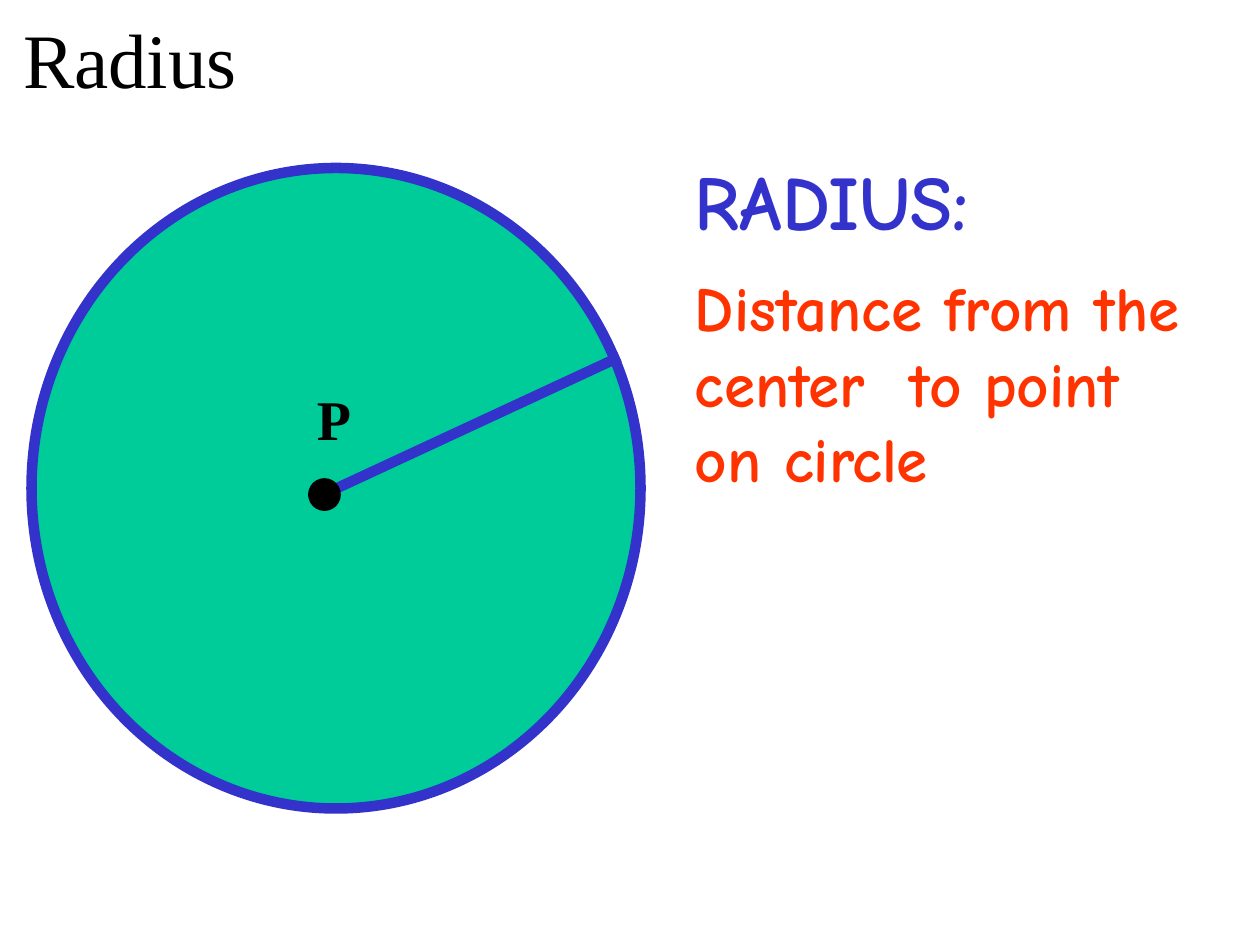
from pptx import Presentation
from pptx.dml.color import RGBColor
from pptx.enum.shapes import MSO_CONNECTOR as Connector, MSO_SHAPE as Shape
from pptx.enum.text import MSO_ANCHOR as Anchor, MSO_AUTO_SIZE as AutoSize, PP_ALIGN as Align
from pptx.oxml.ns import qn
from pptx.util import Inches, Pt
from lxml.etree import SubElement

COLORS = {"ink": "000000", "blue": "3333CC", "green": "00CC99", "red": "FF3300"}
SERIF, COMIC = "Times New Roman", "Comic Neue"
COLUMNS, ROWS = 120, 90


def color(name):
    return RGBColor.from_string(COLORS[name])


class Board:
    """Places elements on a grid of 120 columns by 90 rows."""

    def __init__(self, deck):
        self.slide = deck.slides.add_slide(deck.slide_layouts[5])
        self.column = deck.slide_width / COLUMNS
        self.row = deck.slide_height / ROWS

    def place(self, x, y):
        return round(x * self.column), round(y * self.row)

    def set_text(self, box, text, anchor=Anchor.TOP, **style):
        frame = box.text_frame
        frame.word_wrap = True
        frame.vertical_anchor = anchor
        para = frame.paragraphs[0]
        para.alignment = Align.LEFT
        span = para.add_run()
        span.text = text
        span.font.color.rgb = color(style.pop("tint"))
        for name, value in style.items():
            setattr(span.font, name, value)

    def title(self, text, x, y, width, height, **style):
        box = self.slide.shapes.title
        box.left, box.top = self.place(x, y)
        box.width, box.height = self.place(width, height)
        box.text_frame.auto_size = AutoSize.NONE
        self.set_text(box, text, Anchor.MIDDLE, **style)

    def text(self, text, x, y, width, height, **style):
        box = self.slide.shapes.add_textbox(*self.place(x, y), *self.place(width, height))
        self.set_text(box, text, bold=True, **style)
        box.text_frame.auto_size = AutoSize.SHAPE_TO_FIT_TEXT

    def outline(self, line, tint, weight):
        line.color.rgb = color(tint)
        line.width = Pt(weight)

    def ellipse(self, x, y, width, height, fill, tint, weight):
        shape = self.slide.shapes.add_shape(
            Shape.OVAL, *self.place(x, y), *self.place(width, height))
        shape.shadow.inherit = False
        shape.fill.solid()
        shape.fill.fore_color.rgb = color(fill)
        self.outline(shape.line, tint, weight)

    def line(self, start, end, tint, weight):
        link = self.slide.shapes.add_connector(
            Connector.STRAIGHT, *self.place(*start), *self.place(*end))
        self.outline(link.line, tint, weight)
        SubElement(link._element.spPr, qn("a:effectLst"))


def main():
    deck = Presentation()
    deck.slide_width, deck.slide_height = Inches(10), Inches(7.5)
    board = Board(deck)

    # Title
    board.title("Radius", 1, 2, 101, 7, size=Pt(44), name=SERIF, tint="ink")

    # Circle with its center and radius
    board.ellipse(3, 16, 58, 61, "green", "blue", 6)
    board.text("P", 29, 36, 6, 7.5, size=Pt(32), name=SERIF, tint="ink")
    board.line((31, 47), (59, 34), "blue", 6)
    board.ellipse(29.4, 45.6, 3, 3, "ink", "ink", 0.75)

    # Definition
    board.text("RADIUS:", 65, 14, 55, 10, size=Pt(44), name=COMIC, tint="blue")
    board.text("Distance from the center  to point on circle", 65, 25, 50, 22.8,
               size=Pt(36), name=COMIC, tint="red")

    deck.save("out.pptx")


if __name__ == "__main__":
    main()
